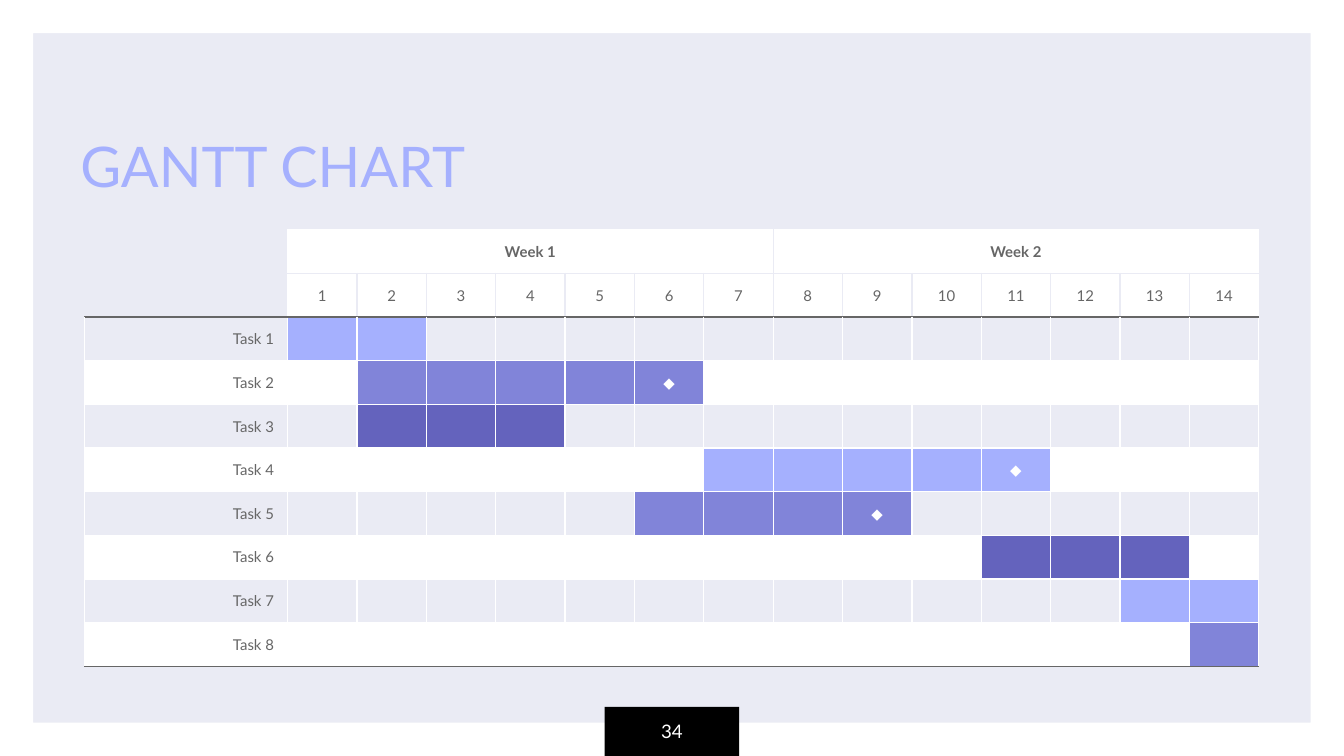
from dataclasses import dataclass

from lxml import etree
from pptx import Presentation, util as u
from pptx.dml.color import RGBColor
from pptx.enum import shapes, text
from pptx.oxml import ns


@dataclass(frozen=True)
class Theme:
    """Colours, font and type sizes of the slide."""
    font: str = "Lato"
    title: int = 30
    page: int = 10
    cell: int = 8
    line: float = 0.75
    white: str = "FFFFFF"
    black: str = "000000"
    pale: str = "EAEBF4"
    grey: str = "666666"
    light: str = "A5B0FE"
    mid: str = "8184D9"
    dark: str = "6463BD"


T = Theme()
WIDE = 10
HIGH = WIDE * 9 / 16
TASKS = [
    (1, 2, T.light, None),
    (2, 6, T.mid, 6),
    (2, 4, T.dark, None),
    (7, 11, T.light, 11),
    (6, 9, T.mid, 9),
    (11, 13, T.dark, None),
    (13, 14, T.light, None),
    (14, 14, T.mid, None),
]
DAYS, HEADS = 14, 2
WEEK = DAYS // 2
ROWS = HEADS + len(TASKS)
LABEL = 1.51
DAY = (8.74 - LABEL) / DAYS
ROW = 3.25 / ROWS


def area(left, top, wide, high):
    """Turn percentages of the slide's size into lengths."""
    sizes = (left * WIDE, top * HIGH, wide * WIDE, high * HIGH)
    return [u.Inches(v / 100) for v in sizes]


def write(frame, words, size=T.cell, color=T.grey, bold=False, align="LEFT"):
    """Put formatted text in a frame."""
    para = frame.paragraphs[0]
    para.alignment = getattr(text.PP_ALIGN, align)
    if not words:
        etree.SubElement(para._p, ns.qn("a:endParaRPr"), sz=str(size * 100))
        return
    run = para.add_run()
    run.text = words
    font = run.font
    font.name, font.size, font.bold = T.font, u.Pt(size), bold
    font.color.rgb = RGBColor.from_string(color)


def label(slide, place, words, anchor, **form):
    """Add a text box with even insets."""
    frame = slide.shapes.add_textbox(*area(*place)).text_frame
    frame.word_wrap = True
    frame.vertical_anchor = getattr(text.MSO_ANCHOR, anchor)
    frame.margin_top = frame.margin_bottom = u.Inches(0.1)
    write(frame, words, **form)


def paint(fill, color):
    """Give a fill one colour, or none."""
    if color:
        fill.solid()
        fill.fore_color.rgb = RGBColor.from_string(color)
    else:
        fill.background()


def block(slide, kind, place, color):
    """Add a plain filled shape."""
    shape = slide.shapes.add_shape(kind, *area(*place))
    shape.shadow.inherit = False
    paint(shape.fill, color)
    shape.line.fill.background()
    return shape


def upright(row, edge):
    """Return the colour of a vertical grid line."""
    if row >= HEADS:
        return T.white
    if edge == 0:
        return None
    return T.white if edge in (1, DAYS + 1) else T.pale


def level(edge, col):
    """Return the colour of a horizontal grid line."""
    if edge in (HEADS, ROWS):
        return T.grey
    if edge < HEADS and col == 0:
        return None
    return T.pale if edge == 1 else T.white


def border(cell, row, col):
    """Draw the four sides of a cell."""
    sides = {
        "L": upright(row, col),
        "R": upright(row, col + cell.span_width),
        "T": level(row, col),
        "B": level(row + 1, col),
    }
    props = cell._tc.get_or_add_tcPr()
    for side, color in sides.items():
        line = etree.SubElement(props, ns.qn(f"a:ln{side}"), w=str(u.Pt(T.line)))
        if color:
            fill = etree.SubElement(line, ns.qn("a:solidFill"))
            etree.SubElement(fill, ns.qn("a:srgbClr"), val=color)
        else:
            etree.SubElement(line, ns.qn("a:noFill"))


def look(row, col):
    """Return the words, fill and text format of a cell."""
    if row < HEADS:
        if col == 0:
            return "", None, {}
        if row:
            return str(col), T.white, {"align": "CENTER"}
        week, rest = divmod(col - 1, WEEK)
        words = "" if rest else f"Week {week + 1}"
        return words, T.white, {"bold": True, "align": "CENTER"}
    task = row - HEADS
    first, last, color, mark = TASKS[task]
    back = T.white if task % 2 else None
    if col == 0:
        return f"Task {task + 1}", back, {"align": "RIGHT"}
    fill = color if first <= col <= last else back
    return "◆" if col == mark else "", fill, {"color": T.white, "align": "CENTER"}


def gantt(slide):
    """Add the schedule table."""
    place = [u.Inches(v) for v in (0.63, 1.71, LABEL + DAYS * DAY, ROWS * ROW)]
    table = slide.shapes.add_table(ROWS, DAYS + 1, *place).table
    table.first_row = table.horz_banding = False
    for col, part in enumerate(table.columns):
        part.width = u.Inches(DAY if col else LABEL)
    for part in table.rows:
        part.height = u.Inches(ROW)
    for col in (1, 1 + WEEK):
        table.cell(0, col).merge(table.cell(0, col + WEEK - 1))
    for row in range(ROWS):
        for col in range(DAYS + 1):
            cell = table.cell(row, col)
            words, color, form = look(row, col)
            border(cell, row, col)
            cell.vertical_anchor = text.MSO_ANCHOR.MIDDLE
            paint(cell.fill, color)
            write(cell.text_frame, words, **form)


def main():
    """Build and save the slide."""
    deck = Presentation()
    deck.slide_width, deck.slide_height = u.Inches(WIDE), u.Inches(HIGH)
    slide = deck.slides.add_slide(deck.slide_layouts[6])
    paint(slide.background.fill, T.pale)
    kind = shapes.MSO_SHAPE
    block(slide, kind.FRAME, (0, 0, 100, 100), T.white).adjustments[0] = 0.044
    tab = (45, 93.5, 10, 6.5)
    block(slide, kind.RECTANGLE, tab, T.black)
    label(slide, (5, 11.4, 56.2, 16.7), "GANTT CHART", "BOTTOM",
          size=T.title, color=T.light)
    label(slide, tab, "34", "MIDDLE", size=T.page, color=T.white, align="CENTER")
    gantt(slide)
    deck.save("out.pptx")


if __name__ == "__main__":
    main()
